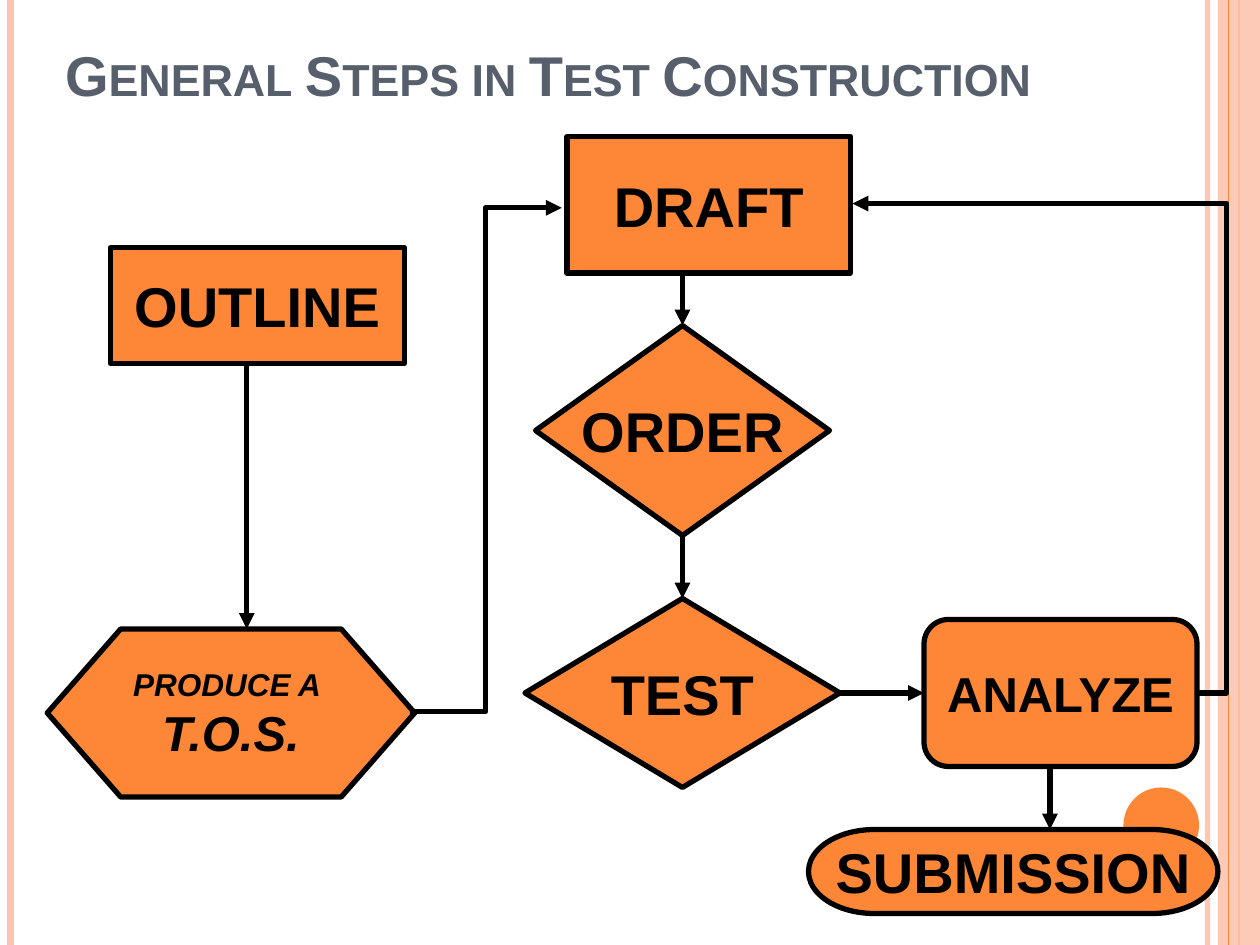
from pptx import Presentation
from pptx.dml.color import RGBColor
from pptx.enum.shapes import MSO_CONNECTOR, MSO_SHAPE
from pptx.enum.text import MSO_ANCHOR, MSO_AUTO_SIZE, PP_ALIGN
from pptx.oxml.ns import qn
from pptx.util import Inches, Pt
from lxml import etree

STRAIGHT, ELBOW = MSO_CONNECTOR.STRAIGHT, MSO_CONNECTOR.ELBOW
PROCESS = MSO_SHAPE.FLOWCHART_PROCESS
DECISION = MSO_SHAPE.FLOWCHART_DECISION
ROUNDED = MSO_SHAPE.FLOWCHART_ALTERNATE_PROCESS
TERMINATOR = MSO_SHAPE.FLOWCHART_TERMINATOR
PREPARATION = MSO_SHAPE.FLOWCHART_PREPARATION
RECTANGLE, OVAL = MSO_SHAPE.RECTANGLE, MSO_SHAPE.OVAL
MIDDLE, BOTTOM = MSO_ANCHOR.MIDDLE, MSO_ANCHOR.BOTTOM
CENTER, LEFT = PP_ALIGN.CENTER, PP_ALIGN.LEFT
NO_AUTOFIT = MSO_AUTO_SIZE.NONE

FONT = "Arial"
ORANGE, PEACH, BLACK, SLATE = "FE8637", "FEC3AE", "000000", "575F6D"
COLUMNS, ROWS = 120, 90

TITLE = "General Steps in Test Construction"
TITLE_AREA = (5, 1.9, 114, 9)

STRIPES_BELOW = [(115, PEACH, 3, 93), (1, PEACH, 4.5, 100), (118, ORANGE, 1.5, 100)]
BAND = (116, 0, 4, ROWS)
STRIPES_ABOVE = [(117, ORANGE, 0.75, 100)]
DOT = (107, 75, 7.2, 7.2)

STEPS = [
    (PROCESS, (10.5, 23.6, 28, 11), [("OUTLINE", 32)], False),
    (PROCESS, (54, 13, 27, 13), [("DRAFT", 32)], False),
    (DECISION, (51, 31, 28, 20), [("ORDER", 32)], False),
    (DECISION, (50, 57, 30, 18), [("TEST", 32)], False),
    (ROUNDED, (88, 59, 26, 14), [("ANALYZE", 28)], False),
    (TERMINATOR, (77, 79, 39, 8), [("SUBMISSION", 32)], False),
    (PREPARATION, (4.5, 59.9, 35, 16), [("PRODUCE A ", 18), ("T.O.S.", 28)], True),
]

ARROWS = [
    ((23.5, 34.8), (23.5, 59.9), None),
    ((39, 67.8), (53.5, 19.8), 0.5),
    ((65, 26), (65, 31), None),
    ((65, 51), (65, 57), None),
    ((80, 66), (88, 66), None),
    ((114.2, 66), (81.2, 19.4), -0.08),
    ((100, 73), (100, 79), None),
]

deck = Presentation()
deck.slide_width, deck.slide_height = Inches(10), Inches(7.5)
cell_width, cell_height = deck.slide_width / COLUMNS, deck.slide_height / ROWS
slide = deck.slides.add_slide(deck.slide_layouts[5])


def color(value):
    return RGBColor.from_string(value)


def place(column, row):
    return round(column * cell_width), round(row * cell_height)


def fade(fill, percent):
    tint = fill.fore_color._xFill.find(qn("a:srgbClr"))
    etree.SubElement(tint, qn("a:alpha"), val=str(percent * 1000))


def add_block(kind, area, fill=ORANGE):
    block = slide.shapes.add_shape(kind, *place(*area[:2]), *place(*area[2:]))
    block.shadow.inherit = False
    block.fill.solid()
    block.fill.fore_color.rgb = color(fill)
    block.line.fill.background()
    return block


def add_line(start, end, stroke, width, kind=STRAIGHT):
    line = slide.shapes.add_connector(kind, *place(*start), *place(*end))
    line.line.color.rgb = color(stroke)
    line.line.width = Pt(width)
    etree.SubElement(line._element.spPr, qn("a:effectLst"))
    return line


def add_stripes(stripes):
    for column, stroke, width, opacity in stripes:
        stripe = add_line((column, 0), (column, ROWS), stroke, width)
        if opacity < 100:
            fade(stripe.line.fill, opacity)


def add_words(paragraph, words, size, ink, align, italic=False):
    paragraph.alignment = align
    run = paragraph.add_run()
    run.text = words
    run.font.name, run.font.size = FONT, Pt(size)
    run.font.bold, run.font.italic = True, italic
    run.font.color.rgb = color(ink)
    return run


def add_step(kind, area, lines, italic):
    step = add_block(kind, area)
    step.line.color.rgb = color(BLACK)
    step.line.width = Pt(3)
    frame = step.text_frame
    frame.word_wrap = False
    frame.vertical_anchor = MIDDLE
    for index, (words, size) in enumerate(lines):
        paragraph = frame.add_paragraph() if index else frame.paragraphs[0]
        add_words(paragraph, words, size, BLACK, CENTER, italic)


def add_arrow(start, end, bend):
    arrow = add_line(start, end, BLACK, 3, STRAIGHT if bend is None else ELBOW)
    etree.SubElement(arrow.line._get_or_add_ln(), qn("a:tailEnd"), type="triangle")
    if bend is not None:
        guides = arrow._element.spPr.prstGeom.get_or_add_avLst()
        etree.SubElement(guides, qn("a:gd"), name="adj1", fmla=f"val {round(bend * 100000)}")


add_stripes(STRIPES_BELOW)
fade(add_block(RECTANGLE, BAND, PEACH).fill, 87)
add_stripes(STRIPES_ABOVE)
add_block(OVAL, DOT)

title = slide.shapes.title
title.left, title.top = place(*TITLE_AREA[:2])
title.width, title.height = place(*TITLE_AREA[2:])
title.text_frame.auto_size = NO_AUTOFIT
title.text_frame.word_wrap = True
title.text_frame.vertical_anchor = BOTTOM
heading = add_words(title.text_frame.paragraphs[0], TITLE, 32, SLATE, LEFT)
heading.font._element.set("cap", "small")

for step in STEPS:
    add_step(*step)
for arrow in ARROWS:
    add_arrow(*arrow)

deck.save("out.pptx")
